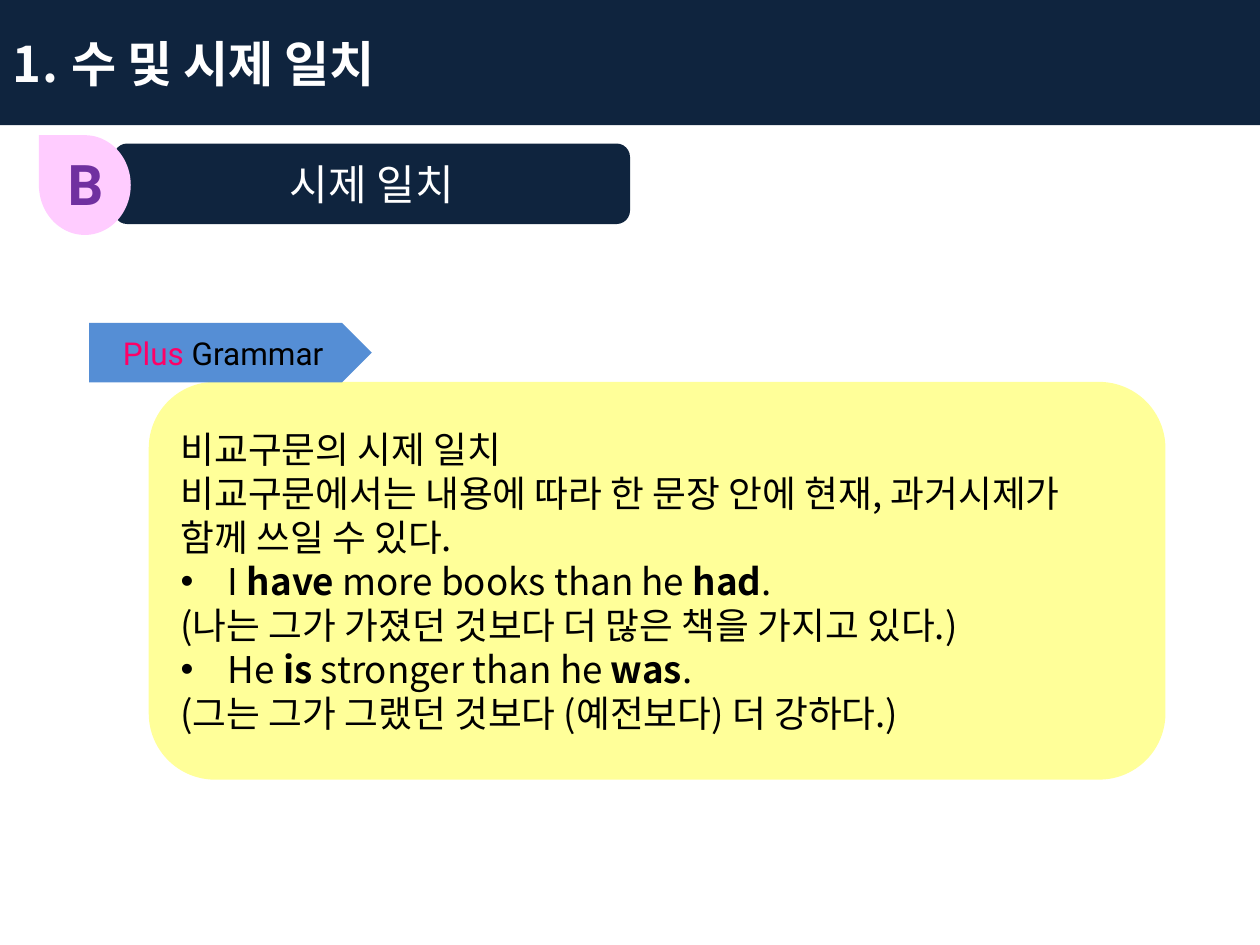
from lxml import etree
from pptx import Presentation
from pptx.dml.color import RGBColor
from pptx.enum.shapes import MSO_SHAPE
from pptx.enum.text import MSO_ANCHOR, PP_ALIGN
from pptx.oxml.ns import qn
from pptx.util import Pt

RECT_ROUND = MSO_SHAPE.FLOWCHART_ALTERNATE_PROCESS
TEARDROP, PENTAGON = MSO_SHAPE.TEAR, MSO_SHAPE.PENTAGON
MIDDLE, LEFT, CENTER = MSO_ANCHOR.MIDDLE, PP_ALIGN.LEFT, PP_ALIGN.CENTER

NAVY = RGBColor(0x0F, 0x24, 0x3E)
WHITE = RGBColor(0xFF, 0xFF, 0xFF)
OFF_WHITE = RGBColor(0xFC, 0xFC, 0xFD)
BLACK = RGBColor(0, 0, 0)
PINK = RGBColor(0xFF, 0xCC, 0xFF)
PURPLE = RGBColor(0x70, 0x30, 0xA0)
YELLOW = RGBColor(0xFF, 0xFF, 0x99)
BLUE = RGBColor(0x55, 0x8E, 0xD5)
RED = RGBColor(0xFF, 0x00, 0x66)
KOREAN, LATIN = "Noto Sans CJK KR", "Roboto"

# Content: each paragraph is a list of spans
TITLE = ["1. ", "수 및 시제 일치"]
SECTION_LETTER = "B"
SECTION = "시제 일치"
TAG = ["Plus ", "Grammar"]
# (bulleted, spans); in bulleted lines every second span is bold
GRAMMAR = [
    (False, ["비교구문의 시제 일치"]),
    (False, ["비교구문에서는 내용에 따라 한 문장 안에 현재, 과거시제가 함께 쓰일 수 있다."]),
    (True, ["I ", "have", " more books than he ", "had", "."]),
    (False, ["(나는 그가 가졌던 것보다 더 많은 책을 가지고 있다.)"]),
    (True, ["He ", "is", " stronger than he ", "was", "."]),
    (False, ["(그는 그가 그랬던 것보다 (예전보다) 더 강하다.)"]),
]
BULLET_INDENT = Pt(27)


def add_block(page, kind, left, top, width, height, color):
    block = page.shapes.add_shape(kind, Pt(left), Pt(top), Pt(width), Pt(height))
    block.shadow.inherit = False
    block.fill.solid()
    block.fill.fore_color.rgb = color
    block.line.fill.background()
    block.text_frame.vertical_anchor = MIDDLE
    return block


def write(para, spans, name, size, color, align=LEFT, bold=False):
    para.alignment = align
    font = para.font
    font.name, font.size, font.bold = name, Pt(size), bold
    font.color.rgb = color
    east_asian = etree.SubElement(font._element, qn("a:ea"))
    east_asian.set("typeface", name)
    for text in spans:
        para.add_run().text = text
    return para.runs


def add_bullet(para):
    properties = para._p.get_or_add_pPr()
    properties.set("marL", str(BULLET_INDENT))
    properties.set("indent", str(-BULLET_INDENT))
    bullet_font = etree.Element(qn("a:buFont"), typeface="Arial")
    bullet = etree.Element(qn("a:buChar"), char="•")
    properties.insert(0, bullet_font)
    bullet_font.addnext(bullet)


def main():
    deck = Presentation()
    deck.slide_width, deck.slide_height = Pt(720), Pt(540)
    page = deck.slides.add_slide(deck.slide_layouts[5])

    # Title band
    title = page.shapes.title
    title.left, title.top, title.width, title.height = Pt(0), Pt(0), Pt(720), Pt(71.5)
    title.fill.solid()
    title.fill.fore_color.rgb = NAVY
    title.text_frame.vertical_anchor = MIDDLE
    number, _ = write(title.text_frame.paragraphs[0], TITLE, KOREAN, 28, WHITE, bold=True)
    number.font.color.rgb = OFF_WHITE
    number.font._element.set("spc", "50")

    # Section heading with its letter badge
    heading = add_block(page, RECT_ROUND, 65, 82, 295, 46, NAVY)
    write(heading.text_frame.paragraphs[0], [SECTION], KOREAN, 24, WHITE, CENTER)
    badge = add_block(page, TEARDROP, 20, 79.5, 57, 52.5, PINK)
    badge.rotation = 270
    letter = page.shapes.add_textbox(Pt(31.5), Pt(82), Pt(34), Pt(46))
    letter.text_frame.word_wrap = True
    write(letter.text_frame.paragraphs[0], [SECTION_LETTER], LATIN, 32, PURPLE, bold=True)

    # Grammar panel
    panel = add_block(page, RECT_ROUND, 85, 218.2, 581, 227.3, YELLOW)
    for index, (bulleted, spans) in enumerate(GRAMMAR):
        frame = panel.text_frame
        para = frame.add_paragraph() if index else frame.paragraphs[0]
        runs = write(para, spans, KOREAN, 21, BLACK)
        if bulleted:
            add_bullet(para)
            for span in runs[1::2]:
                span.font.bold = True

    # Tag on top of the panel
    tag = add_block(page, PENTAGON, 51, 184.5, 161.5, 34, BLUE)
    plus, _ = write(tag.text_frame.paragraphs[0], TAG, LATIN, 18, BLACK, CENTER)
    plus.font.color.rgb = RED

    deck.save("out.pptx")


if __name__ == "__main__":
    main()
